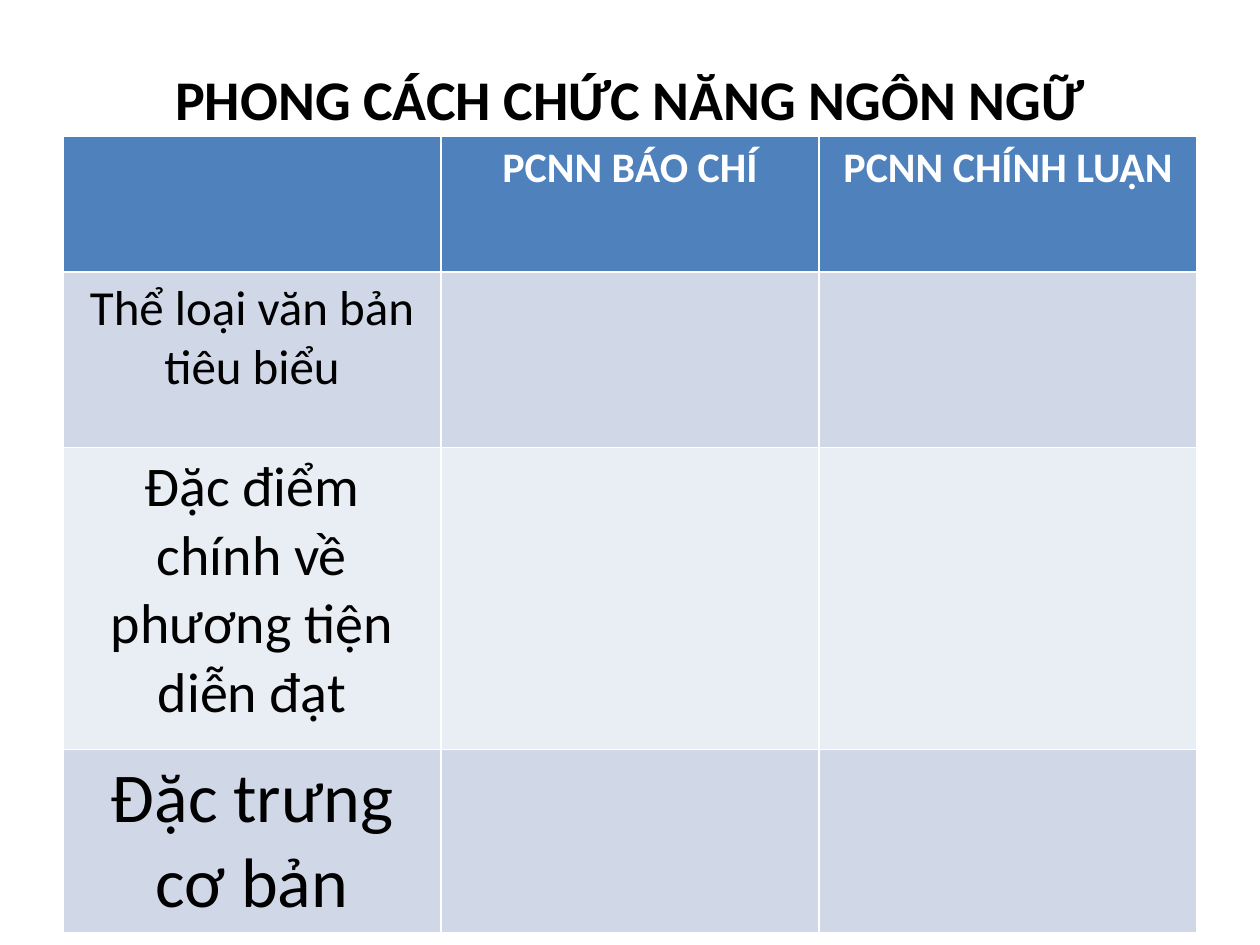
from pptx import Presentation
from pptx.dml.color import RGBColor as RGB
from pptx.enum.text import MSO_ANCHOR as Anchor, PP_ALIGN as Align
from pptx.util import Inches, Pt

COLORS = {"header": "4F81BD", "odd": "D0D8E8", "even": "E9EDF4",
          "light": "FFFFFF", "dark": "000000"}
FONT = "Calibri"


def style(p, size, color, bold):
    p.alignment = Align.CENTER
    p.font.name = FONT
    p.font.size = Pt(size)
    p.font.bold = bold
    p.font.color.rgb = RGB.from_string(COLORS[color])


prs = Presentation()
prs.slide_width, prs.slide_height = Inches(10), Inches(7.5)
W, H = prs.slide_width, prs.slide_height
margin = int(W * 0.05)
content_w = W - 2 * margin
s = prs.slides.add_slide(prs.slide_layouts[5])

# Title
title = s.shapes.title
title.left, title.top, title.width, title.height = margin, 0, content_w, Inches(1.55)
tf = title.text_frame
tf.text = "PHONG CÁCH CHỨC NĂNG NGÔN NGỮ"
tf.vertical_anchor = Anchor.MIDDLE
style(tf.paragraphs[0], 32, "dark", True)

# Comparison table: row height, fill, text size, cell texts
rows = [
    (1.08, "header", 24, ["", "PCNN BÁO CHÍ", "PCNN CHÍNH LUẬN"]),
    (1.39, "odd", 28, ["Thể loại văn bản tiêu biểu", "", ""]),
    (2.4, "even", 32, ["Đặc điểm\nchính về phương tiện diễn đạt", "", ""]),
    (1.39, "odd", 40, ["Đặc trưng cơ bản", "", ""]),
]
table_h = Inches(sum(row[0] for row in rows))
table = s.shapes.add_table(len(rows), 3, margin, Inches(1.08), content_w, table_h).table

for r, (height, fill, size, texts) in enumerate(rows):
    table.rows[r].height = Inches(height)
    is_header = fill == "header"
    for c, text in enumerate(texts):
        cell = table.cell(r, c)
        cell.fill.solid()
        cell.fill.fore_color.rgb = RGB.from_string(COLORS[fill])
        if text:
            cell.text = text
            for p in cell.text_frame.paragraphs:
                style(p, size, "light" if is_header else "dark", is_header)

prs.save("out.pptx")
